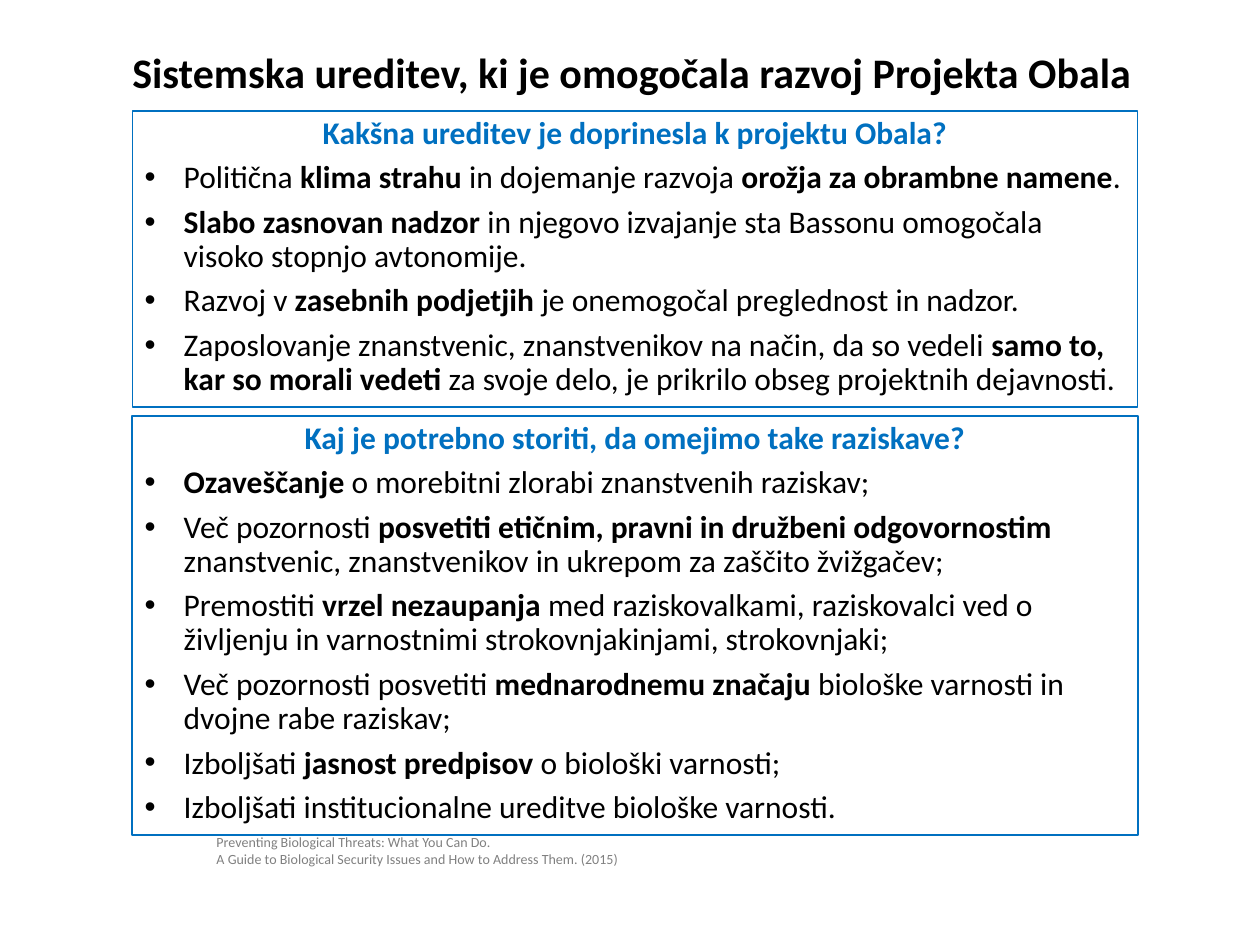
"""Build a slide on the oversight that allowed Project Coast and its remedies."""
from dataclasses import dataclass

from lxml import etree
from pptx import Presentation
from pptx.dml.color import RGBColor
from pptx.enum.shapes import MSO_SHAPE
from pptx.enum.text import MSO_ANCHOR, MSO_AUTO_SIZE, PP_ALIGN
from pptx.oxml.ns import qn
from pptx.slide import Slide
from pptx.text.text import TextFrame, _Paragraph
from pptx.util import Inches, Pt

RECTANGLE = MSO_SHAPE.RECTANGLE
TOP, MIDDLE = MSO_ANCHOR.TOP, MSO_ANCHOR.MIDDLE
LEFT, CENTER = PP_ALIGN.LEFT, PP_ALIGN.CENTER
FIT_SHAPE = MSO_AUTO_SIZE.SHAPE_TO_FIT_TEXT

BLACK = RGBColor(0x00, 0x00, 0x00)
BLUE = RGBColor(0x00, 0x70, 0xC0)
GRAY = RGBColor(0x80, 0x80, 0x80)
FONT = "Calibri"
BOLD_MARK = "**"
INDENT = Inches(0.31)
PANEL_LEFT, PANEL_WIDTH = Inches(1.05), Inches(7.98)


@dataclass(frozen=True)
class Panel:
    """A framed question with bulleted answers; bold spans stand between marks."""

    top: float
    height: float
    line_width: float
    heading: str
    answers: tuple[str, ...]


CAUSES = Panel(0.88, 2.35, 0.75, "Kakšna ureditev je doprinesla k projektu Obala?", (
    "Politična **klima strahu **in dojemanje razvoja **orožja za obrambne namene**.",
    "**Slabo zasnovan nadzor** in njegovo izvajanje sta Bassonu omogočala "
    "visoko stopnjo avtonomije.",
    "Razvoj v **zasebnih podjetjih **je onemogočal preglednost in nadzor.",
    "Zaposlovanje znanstvenic, znanstvenikov na način, da so vedeli **samo to, "
    "kar so morali vedeti** za svoje delo, je prikrilo obseg projektnih dejavnosti.",
))
REMEDIES = Panel(3.3, 3.33, 1, "Kaj je potrebno storiti, da omejimo take raziskave?", (
    "**Ozaveščanje** o morebitni zlorabi znanstvenih raziskav;",
    "Več pozornosti **posvetiti etičnim, pravni in družbeni odgovornostim **"
    "znanstvenic, znanstvenikov in ukrepom za zaščito žvižgačev;",
    "Premostiti **vrzel nezaupanja **med raziskovalkami, raziskovalci ved o "
    "življenju in varnostnimi strokovnjakinjami, strokovnjaki;",
    "Več pozornosti posvetiti **mednarodnemu značaju **biološke varnosti in "
    "dvojne rabe raziskav;",
    "Izboljšati **jasnost predpisov **o biološki varnosti;",
    "Izboljšati institucionalne ureditve biološke varnosti.",
))


def set_font(para: _Paragraph, size: float, color: RGBColor) -> None:
    """Set the font shared by all spans of a paragraph."""
    para.font.name = FONT
    para.font.size = Pt(size)
    para.font.color.rgb = color


def add_bullet(para: _Paragraph) -> None:
    """Give a paragraph a hanging round bullet."""
    properties = para._p.get_or_add_pPr()
    properties.set("marL", str(INDENT))
    properties.set("indent", str(-INDENT))
    etree.SubElement(properties, qn("a:buFont"), typeface="Arial")
    etree.SubElement(properties, qn("a:buChar"), char="•")


def add_spans(para: _Paragraph, text: str) -> None:
    """Add the text as spans that alternate between regular and bold."""
    for index, part in enumerate(text.split(BOLD_MARK)):
        if part:
            span = para.add_run()
            span.text = part
            span.font.bold = index % 2 == 1


def prepare_frame(frame: TextFrame, anchor: MSO_ANCHOR) -> None:
    """Make a text frame wrap and fit its text."""
    frame.word_wrap = True
    frame.auto_size = FIT_SHAPE
    frame.vertical_anchor = anchor


def add_label(page: Slide, area: tuple[float, ...], lines: tuple[str, ...], size: float,
              color: RGBColor, align: PP_ALIGN = LEFT, anchor: MSO_ANCHOR = TOP,
              bold: bool = False) -> None:
    """Add an unframed text box with one paragraph a line."""
    frame = page.shapes.add_textbox(*map(Inches, area)).text_frame
    prepare_frame(frame, anchor)
    frame.text = "\n".join(lines)
    for para in frame.paragraphs:
        para.alignment = align
        set_font(para, size, color)
        para.font.bold = bold


def add_panel(page: Slide, panel: Panel) -> None:
    """Add a framed box with a heading and its bulleted answers."""
    box = page.shapes.add_shape(RECTANGLE, PANEL_LEFT, Inches(panel.top),
                                PANEL_WIDTH, Inches(panel.height))
    box.shadow.inherit = False
    box.fill.background()
    box.line.color.rgb = BLUE
    box.line.width = Pt(panel.line_width)
    frame = box.text_frame
    prepare_frame(frame, TOP)
    heading = frame.paragraphs[0]
    heading.text = panel.heading
    heading.alignment = CENTER
    set_font(heading, 18, BLUE)
    heading.font.bold = True
    for answer in panel.answers:
        para = frame.add_paragraph()
        para.alignment = LEFT
        add_bullet(para)
        add_spans(para, answer)
        set_font(para, 18, BLACK)
    for para in frame.paragraphs:
        para.line_spacing = 0.9
    for para in frame.paragraphs[:-1]:
        para.space_after = Pt(6)


def main() -> None:
    """Build and save the deck."""
    deck = Presentation()
    deck.slide_width, deck.slide_height = Inches(10), Inches(7.5)
    page = deck.slides.add_slide(deck.slide_layouts[6])
    add_label(page, (0.29, 0.32, 9.45, 0.5),
              ("Sistemska ureditev, ki je omogočala razvoj Projekta Obala",),
              24, BLACK, CENTER, MIDDLE, bold=True)
    add_panel(page, CAUSES)
    add_label(page, (1.62, 6.57, 3.4, 0.37),
              ("Preventing Biological Threats: What You Can Do.",
               "A Guide to Biological Security Issues and How to Address Them. (2015)"),
              8, GRAY)
    add_panel(page, REMEDIES)
    deck.save("out.pptx")


if __name__ == "__main__":
    main()
